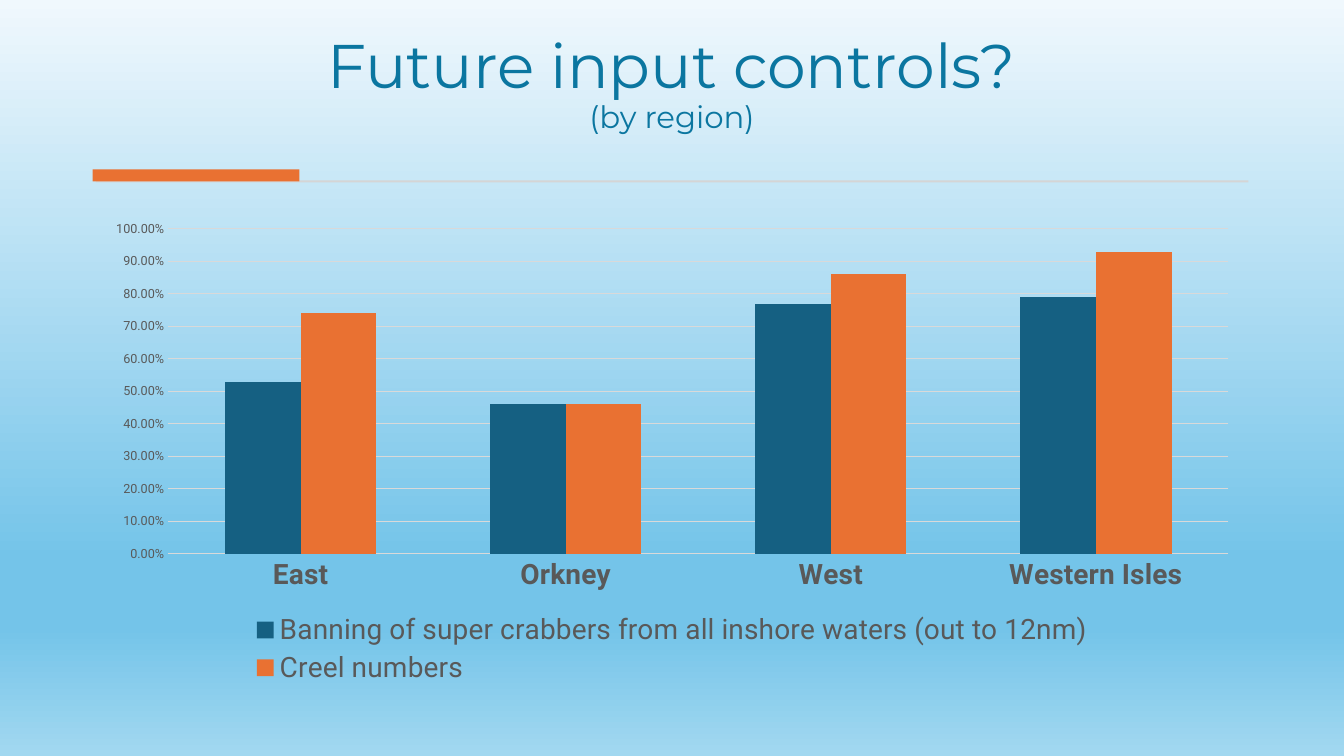
"""Build the slide on future input controls by region."""
from dataclasses import dataclass

import pptx
import pptx.chart.data
import pptx.dml.color
import pptx.enum.chart
import pptx.enum.shapes
import pptx.enum.text
import pptx.oxml
import pptx.oxml.ns
import pptx.util

SLIDE_WIDTH, SLIDE_HEIGHT = pptx.util.Inches(13.33), pptx.util.Inches(7.5)
HEADING_FONT, BODY_FONT = "Montserrat", "Roboto"
TITLE_BLUE, SERIES_BLUE, ORANGE = "0B76A0", "156082", "E97132"
RULE_GREY, GRID_GREY, LABEL_GREY = "D5D5D5", "D9D9D9", "595959"
REGIONS = ("East", "Orkney", "West", "Western Isles")


@dataclass(frozen=True)
class Area:
    """A rectangle in percent of the space that holds it."""
    left: float
    top: float
    width: float
    height: float

    def on_slide(self) -> tuple[int, int, int, int]:
        """Return the rectangle in slide lengths."""
        return (int(SLIDE_WIDTH * self.left / 100), int(SLIDE_HEIGHT * self.top / 100),
                int(SLIDE_WIDTH * self.width / 100), int(SLIDE_HEIGHT * self.height / 100))


@dataclass(frozen=True)
class Bar:
    """A plain coloured bar of the divider."""
    area: Area
    color: str


@dataclass(frozen=True)
class Measure:
    """A proposed control and its support in each region."""
    name: str
    support: tuple[float, ...]
    color: str


@dataclass(frozen=True)
class TitleLine:
    """A line of the title with its size in points."""
    text: str
    size: int


@dataclass(frozen=True)
class GradientStop:
    """A background colour at a percentage of the height."""
    percent: int
    color: str


TITLE_AREA = Area(6.9, 3.73, 86.2, 14.8)
CHART_AREA = Area(6.9, 28.13, 86.27, 63.6)
PLOT_AREA = Area(6.5, 3.4, 91.45, 67.6)
LEGEND_AREA = Area(13.5, 82.5, 73, 16.5)
TITLE_LINES = (TitleLine("Future input controls?", 44), TitleLine("(by region)", 22))
DIVIDER = (
    Bar(Area(7.13, 23.87, 85.75, 0.27), RULE_GREY),
    Bar(Area(6.9, 22.4, 15.38, 1.6), ORANGE),
)
SKY = (GradientStop(0, "F0F8FD"), GradientStop(74, "74C4E9"),
       GradientStop(83, "74C4E9"), GradientStop(100, "A2D8F0"))
MEASURES = (
    Measure("Banning of super crabbers from all inshore waters (out to 12nm)",
            (0.53, 0.46, 0.77, 0.79), SERIES_BLUE),
    Measure("Creel numbers", (0.74, 0.46, 0.86, 0.93), ORANGE),
)


def rgb(color: str) -> pptx.dml.color.RGBColor:
    """Turn a hex string into a colour."""
    return pptx.dml.color.RGBColor.from_string(color)


def style_font(font, name: str, size: float, color: str, bold: bool = False) -> None:
    """Set the look of a font."""
    font.name, font.size, font.bold = name, pptx.util.Pt(size), bold
    font.color.rgb = rgb(color)


def paint_background(slide, stops: tuple[GradientStop, ...]) -> None:
    """Fill the background with a gradient from top to bottom."""
    fill = slide.background.fill
    fill.gradient()
    fill.gradient_angle = 270
    stop_list = slide.element.xpath(".//p:bg//a:gsLst")[0]
    for old_stop in list(stop_list):
        stop_list.remove(old_stop)
    for stop in stops:
        stop_list.append(pptx.oxml.parse_xml(
            f'<a:gs {pptx.oxml.ns.nsdecls("a")} pos="{stop.percent * 1000}">'
            f'<a:srgbClr val="{stop.color}"/></a:gs>'))


def write_title(title, lines: tuple[TitleLine, ...]) -> None:
    """Place the title and write its lines."""
    title.left, title.top, title.width, title.height = TITLE_AREA.on_slide()
    frame = title.text_frame
    frame.word_wrap = True
    frame.auto_size = pptx.enum.text.MSO_AUTO_SIZE.NONE
    frame.vertical_anchor = pptx.enum.text.MSO_ANCHOR.BOTTOM
    paragraph = frame.paragraphs[0]
    paragraph.alignment = pptx.enum.text.PP_ALIGN.CENTER
    paragraph.line_spacing = 0.9
    for number, line in enumerate(lines):
        if number:
            paragraph.add_line_break()
        run = paragraph.add_run()
        run.text = line.text
        style_font(run.font, HEADING_FONT, line.size, TITLE_BLUE)


def draw_bar(slide, bar: Bar) -> None:
    """Draw one bar of the divider."""
    strip = slide.shapes.add_shape(pptx.enum.shapes.MSO_SHAPE.RECTANGLE, *bar.area.on_slide())
    strip.shadow.inherit = False
    strip.fill.solid()
    strip.fill.fore_color.rgb = rgb(bar.color)
    strip.line.fill.background()


def fix_layout(part, position: int, area: Area, inner: bool = False) -> None:
    """Give a chart part a fixed place within the chart."""
    for old_layout in part.xpath("./c:layout"):
        part.remove(old_layout)
    target = '<c:layoutTarget val="inner"/>' if inner else ""
    shares = {"x": area.left, "y": area.top, "w": area.width, "h": area.height}
    modes = "".join(f'<c:{key}Mode val="edge"/>' for key in ("x", "y"))
    values = "".join(f'<c:{key} val="{share / 100:.4f}"/>' for key, share in shares.items())
    part.insert(position, pptx.oxml.parse_xml(
        f'<c:layout {pptx.oxml.ns.nsdecls("c")}><c:manualLayout>'
        f'{target}{modes}{values}</c:manualLayout></c:layout>'))


def format_axes(chart) -> None:
    """Format the region axis and the percentage axis."""
    regions, support = chart.category_axis, chart.value_axis
    for axis in (regions, support):
        axis.major_tick_mark = axis.minor_tick_mark = pptx.enum.chart.XL_TICK_MARK.NONE
    style_font(regions.tick_labels.font, BODY_FONT, 20, LABEL_GREY, True)
    style_font(support.tick_labels.font, BODY_FONT, 9, LABEL_GREY)
    support.minimum_scale, support.maximum_scale, support.major_unit = 0, 1, 0.1
    support.tick_labels.number_format = "0.00%"
    support.tick_labels.number_format_is_linked = False
    support.format.line.fill.background()
    support.has_major_gridlines = True
    for line in (regions.format.line, support.major_gridlines.format.line):
        line.width = pptx.util.Pt(0.75)
        line.color.rgb = rgb(GRID_GREY)


def add_support_chart(slide, measures: tuple[Measure, ...]) -> None:
    """Add the column chart of support by region."""
    data = pptx.chart.data.CategoryChartData(number_format="0.00%")
    data.categories = REGIONS
    for measure in measures:
        data.add_series(measure.name, measure.support)
    chart = slide.shapes.add_chart(pptx.enum.chart.XL_CHART_TYPE.COLUMN_CLUSTERED,
                                   *CHART_AREA.on_slide(), data).chart
    style_font(chart.font, BODY_FONT, 10, "000000")
    chart.has_title = False
    columns = chart.plots[0]
    columns.vary_by_categories = False
    columns.gap_width, columns.overlap = 150, 0
    for series, measure in zip(columns.series, measures):
        series.format.fill.solid()
        series.format.fill.fore_color.rgb = rgb(measure.color)
    format_axes(chart)
    chart.has_legend = True
    chart.legend.position = pptx.enum.chart.XL_LEGEND_POSITION.BOTTOM
    chart.legend.include_in_layout = False
    style_font(chart.legend.font, BODY_FONT, 20, LABEL_GREY)
    fix_layout(chart.element.xpath(".//c:plotArea")[0], 0, PLOT_AREA, inner=True)
    fix_layout(chart.element.xpath(".//c:legend")[0], 1, LEGEND_AREA)


def main() -> None:
    """Build and save the presentation."""
    deck = pptx.Presentation()
    deck.slide_width, deck.slide_height = SLIDE_WIDTH, SLIDE_HEIGHT
    slide = deck.slides.add_slide(deck.slide_layouts.get_by_name("Title Only"))
    paint_background(slide, SKY)
    write_title(slide.shapes.title, TITLE_LINES)
    for bar in DIVIDER:
        draw_bar(slide, bar)
    add_support_chart(slide, MEASURES)
    deck.save("out.pptx")


if __name__ == "__main__":
    main()
